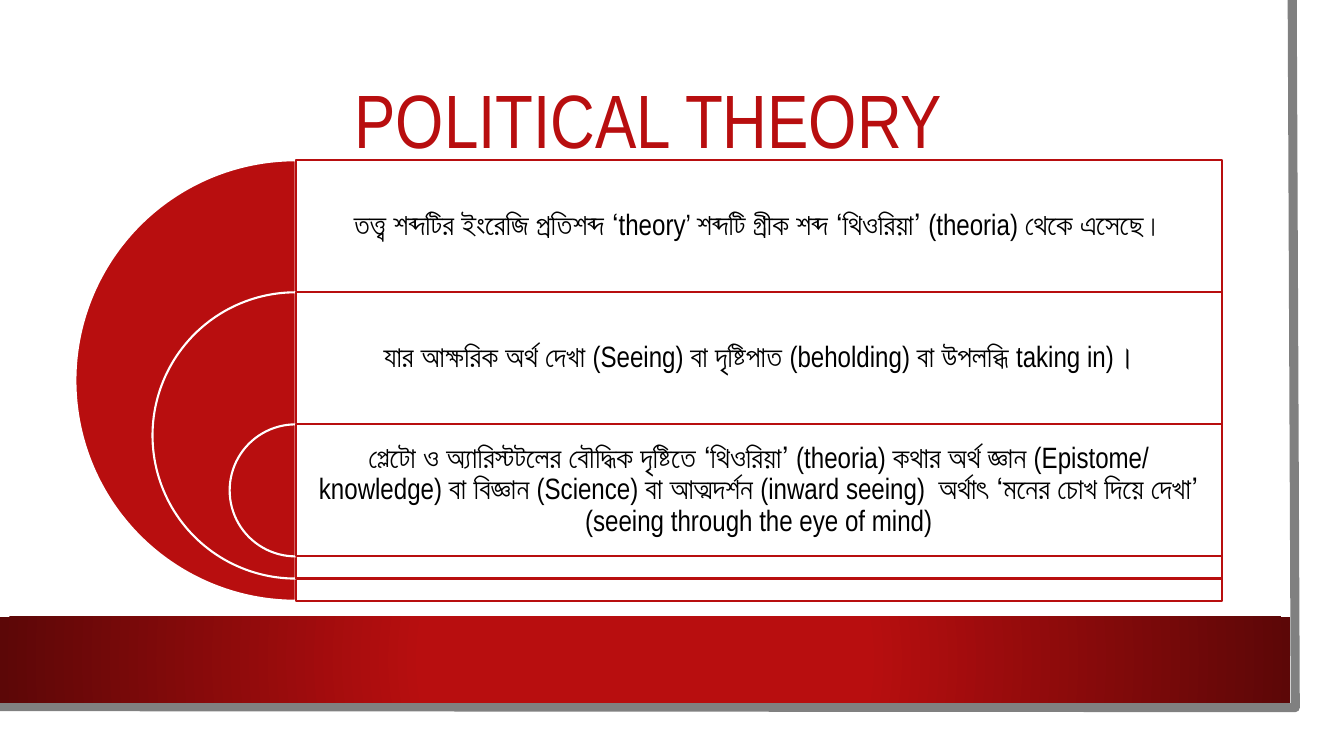
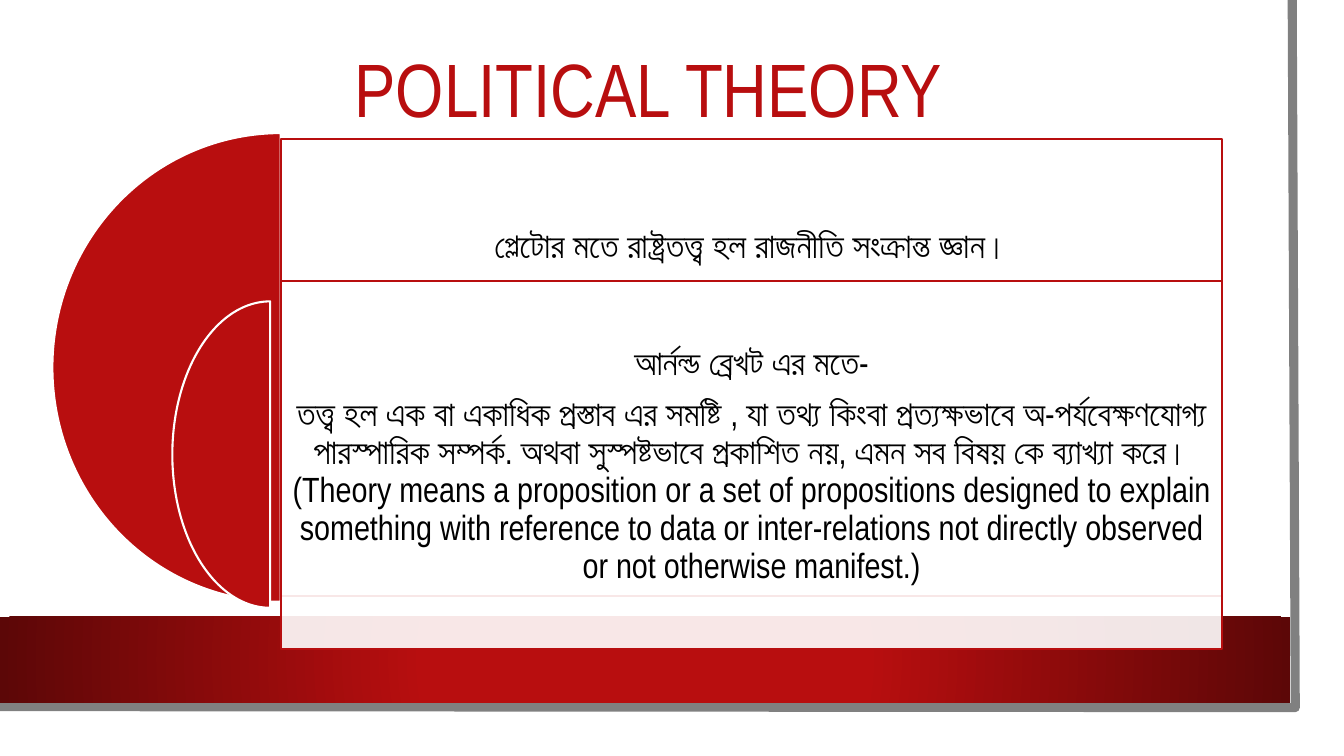
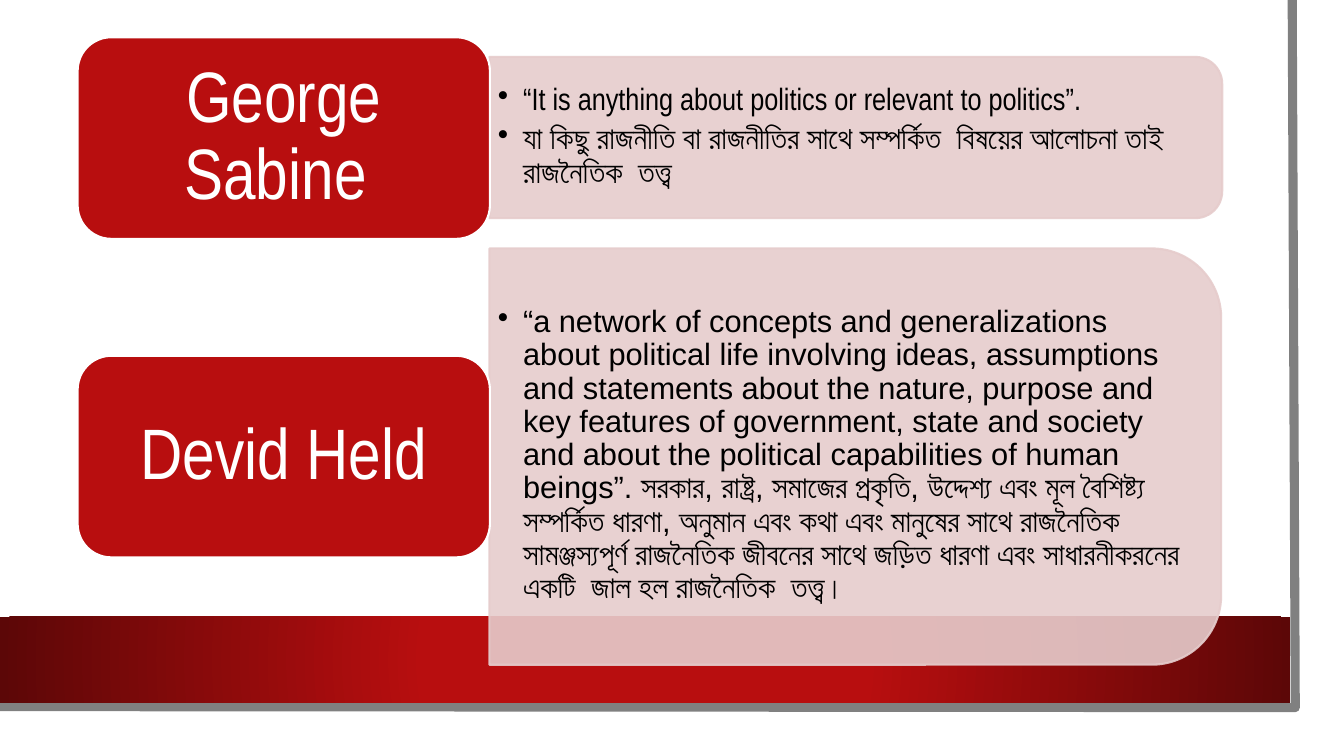
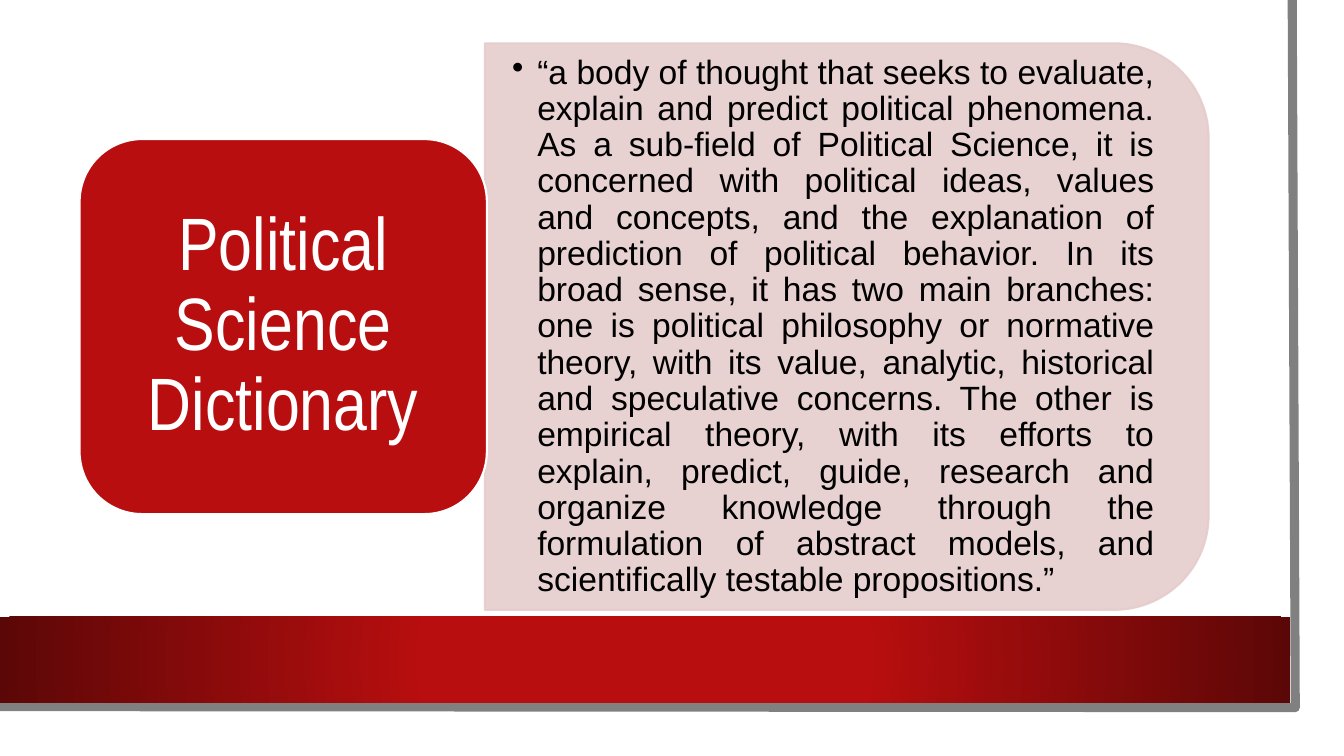
import pptx
import pptx.dml.color
import pptx.enum.shapes
import pptx.enum.text
import pptx.oxml.ns
import pptx.util
from lxml import etree

COLUMNS, ROWS = 160, 90
CELL = pptx.util.Pt(6)
COLORS = {
    "red": "B80E0F",
    "dark red": "5C0707",
    "pink": "E6CCCC",
    "grey": "808080",
    "white": "FFFFFF",
    "black": "000000",
}
SANS, NARROW = "Arial", "Arial Narrow"
SHAPES = pptx.enum.shapes.MSO_SHAPE
ALIGN = pptx.enum.text.PP_ALIGN
qn = pptx.oxml.ns.qn


def cells(*counts):
    return [pptx.util.Emu(round(count * CELL)) for count in counts]


def color(name):
    return pptx.dml.color.RGBColor.from_string(COLORS[name])


def fade(shape, fills):
    for tone in shape.element.xpath(fills + "/a:srgbClr"):
        etree.SubElement(tone, qn("a:alpha"), val="90000")


class Style:
    """Holds the shared style and the current slide, on a grid of 160 by 90 square cells."""

    def __init__(self):
        self.deck = pptx.Presentation()
        self.deck.slide_width, self.deck.slide_height = cells(COLUMNS, ROWS)
        self.layout = self.deck.slide_layouts[6]
        self.page = None

    def add_page(self):
        self.page = self.deck.slides.add_slide(self.layout)

    def backdrop(self):
        for holder in list(self.layout.placeholders):
            holder.element.getparent().remove(holder.element)
        sheet = self.draw(SHAPES.RECTANGLE, (0, 0, 157.2, 87.24), "white")

        corners = [cells(*point) for point in ((153.84, 0), (154.2, 84.24), (-0.36, 84.12))]
        builder = self.page.shapes.build_freeform(*corners[0])
        builder.add_line_segments(corners[1:], close=False)
        edge = builder.convert_to_shape()
        edge.shadow.inherit = False
        edge.fill.background()
        self.outline(edge, "grey", 6.5)

        band = self.draw(SHAPES.RECTANGLE, (0, 73.44, 153.6, 10.2), "red")
        band.fill.gradient()
        for stop, name, position in zip(band.fill.gradient_stops, ("red", "dark red"), (0.34, 1)):
            stop.color.rgb = color(name)
            stop.position = position
        gradient = band.element.spPr.find(qn("a:gradFill"))
        gradient.remove(gradient.find(qn("a:lin")))
        circle = etree.SubElement(gradient, qn("a:path"), {"path": "circle"})
        etree.SubElement(circle, qn("a:fillToRect"), dict.fromkeys("ltrb", "50000"))

        for shape in (sheet, edge, band):
            self.layout.shapes.element.append(shape.element)

    def draw(self, kind, box, fill):
        shape = self.page.shapes.add_shape(kind, *cells(*box))
        shape.shadow.inherit = False
        shape.fill.solid()
        shape.fill.fore_color.rgb = color(fill)
        shape.line.fill.background()
        return shape

    def outline(self, shape, name, width=1.5):
        shape.line.color.rgb = color(name)
        shape.line.width = pptx.util.Pt(width)

    def half_disc(self, box):
        disc = self.draw(SHAPES.PIE, box, "red")
        disc.adjustments[0], disc.adjustments[1] = 54, 162
        self.outline(disc, "white")

    def panel(self, box):
        panel = self.draw(SHAPES.RECTANGLE, box, "white")
        fade(panel, "p:spPr/a:solidFill")
        self.outline(panel, "red")

    def card(self, box):
        left, top, width, height = box
        shift = (width - height) / 2
        upright = (left + shift, top - shift, height, width)
        card = self.draw(SHAPES.ROUND_2_SAME_RECTANGLE, upright, "pink")
        card.rotation = 90
        self.outline(card, "pink")
        fade(card, "p:spPr//a:solidFill")

    def label(self, box, text, size):
        label = self.draw(SHAPES.ROUNDED_RECTANGLE, box, "red")
        self.outline(label, "white")
        self.fill_frame(label.text_frame, [text], size, tone="white", insets=(2.55, 1.32))

    def title(self, box, text):
        self.text_box(box, [text], 54, tone="red", insets=(1.2, 0.6))

    def text_box(self, box, paragraphs, size, **style):
        frame = self.page.shapes.add_textbox(*cells(*box)).text_frame
        return self.fill_frame(frame, paragraphs, size, **style)

    def fill_frame(self, frame, paragraphs, size, font=NARROW, tone="black", align=ALIGN.CENTER,
                   insets=(1.08, 1.08), gap=0, bullet=False):
        frame.text = "\n".join(paragraphs)
        frame.word_wrap = True
        frame.vertical_anchor = pptx.enum.text.MSO_ANCHOR.MIDDLE
        frame.margin_left, frame.margin_top = cells(*insets)
        frame.margin_right, frame.margin_bottom = cells(*insets)
        for para in frame.paragraphs:
            if bullet:
                hang = cells(3)[0]
                properties = para._p.get_or_add_pPr()
                properties.set("marL", str(hang))
                properties.set("indent", str(-hang))
                etree.SubElement(properties, qn("a:buChar"), char="•")
            para.alignment = align
            para.line_spacing = 0.9
            para.space_after = pptx.util.Pt(gap)
            for span in para.runs:
                self.style_span(span, size, font, tone)
        return frame

    def style_span(self, span, size, font, tone="black"):
        span.font.size = pptx.util.Pt(size)
        span.font.name = font
        span.font.color.rgb = color(tone)


def origin_of_theory(style):
    style.title((9, 9, 136.44, 11.64), "POLITICAL THEORY")
    meanings = [
        "তত্ত্ব শব্দটির ইংরেজি প্রতিশব্দ ‘theory’ শব্দটি গ্রীক শব্দ ‘থিওরিয়া’ (theoria) থেকে এসেছে।",
        "যার আক্ষরিক অর্থ দেখা (Seeing) বা দৃষ্টিপাত (beholding) বা উপলব্ধি taking in)।",
        "প্লেটো ও অ্যারিস্টটলের বৌদ্ধিক দৃষ্টিতে ‘থিওরিয়া’ (theoria) কথার অর্থ জ্ঞান (Epistome/ "
        "knowledge) বা বিজ্ঞান (Science) বা আত্মদর্শন (inward seeing)  অর্থাৎ ‘মনের চোখ দিয়ে দেখা’ "
        "(seeing through the eye of mind)",
    ]
    center, width, step = 35.2, 110.24, 15.72
    for index, meaning in enumerate(meanings):
        top = 19.08 + index * step
        size = 52.44 - index * 18.36
        style.half_disc((center - size / 2, top, size, size))
        style.panel((center, top, width, size))
        style.text_box((center, top, width, step), [meaning], 21)


def definitions_of_theory(style):
    style.title((9, 3.48, 136.44, 15.12), "POLITICAL THEORY")
    left, width = 33.48, 111.96
    plato = ["প্লেটোর মতে রাষ্ট্রতত্ত্ব হল রাজনীতি সংক্রান্ত জ্ঞান।"]
    brecht = [
        "আর্নল্ড ব্রেখট এর মতে-",
        "তত্ত্ব হল এক বা একাধিক প্রস্তাব এর সমষ্টি , যা তথ্য কিংবা প্রত্যক্ষভাবে অ-পর্যবেক্ষণযোগ্য "
        "পারস্পারিক সম্পর্ক. অথবা সুস্পষ্টভাবে প্রকাশিত নয়, এমন সব বিষয় কে ব্যাখ্যা করে। "
        "(Theory means a proposition or a set of propositions designed to explain something with "
        "reference to data or inter-relations not directly observed or not otherwise manifest.)",
    ]
    for disc, top, height, text_height, paragraphs in (
        ((6.24, 15.84, 54.36, 55.8), 16.56, 54.36, 25.8, plato),
        ((20.52, 35.88, 23.28, 36.48), 33.48, 43.8, 43.8, brecht),
    ):
        style.half_disc(disc)
        style.panel((left, top, width, height))
        style.text_box((left, top, width, text_height), paragraphs, 25, insets=(1.2, 1.2), gap=10)


def sabine_and_held(style):
    quote = {"align": ALIGN.LEFT, "insets": (1.08, 0.6), "gap": 4, "bullet": True}
    style.card((58.26, 6.78, 87.24, 19.2))
    style.text_box((58.2, 7.68, 86.28, 17.28), [
        "“It is anything about politics or relevant to politics”.",
        "যা কিছু রাজনীতি বা রাজনীতির সাথে সম্পর্কিত  বিষয়ের আলোচনা তাই রাজনৈতিক  তত্ত্ব",
    ], 22, **quote)
    style.label((9.24, 4.44, 49.08, 24), "George Sabine ", 51)

    style.card((58.26, 29.58, 87.12, 49.56))
    held = style.text_box((58.2, 31.92, 84.72, 44.64), [
        "“a network of concepts and generalizations about political life involving ideas, "
        "assumptions and statements about the nature, purpose and key features of government, "
        "state and society and about the political capabilities of human beings”. "
        "সরকার, রাষ্ট্র, সমাজের প্রকৃতি, উদ্দেশ্য এবং মূল বৈশিষ্ট্য  সম্পর্কিত ধারণা, অনুমান এবং কথা এবং "
        "মানুষের সাথে রাজনৈতিক সামঞ্জস্যপূর্ণ রাজনৈতিক জীবনের সাথে জড়িত ধারণা এবং সাধারনীকরনের "
        "একটি  জাল হল ",
    ], 22, font=SANS, **quote)
    ending = held.paragraphs[0].add_run()
    ending.text = "রাজনৈতিক  তত্ত্ব।"
    style.style_span(ending, 22, NARROW)
    style.label((9.24, 42.36, 49.08, 24), "Devid Held", 51)


def dictionary_entry(style):
    style.card((57.72, 5.16, 86.16, 67.44))
    style.text_box((57.72, 8.52, 82.92, 60.84), [
        "“a body of thought that seeks to evaluate, explain and predict political phenomena. As a "
        "sub-field of Political Science, it is concerned with political ideas, values and concepts, "
        "and the explanation of prediction of political behavior. In its broad sense, it has two main "
        "branches: one is political philosophy or normative theory, with its value, analytic, "
        "historical and speculative concerns. The other is empirical theory, with its efforts to "
        "explain, predict, guide, research and organize knowledge through the formulation of abstract "
        "models, and scientifically testable propositions.”",
    ], 24, font=SANS, align=ALIGN.JUSTIFY, insets=(3.24, 1.68), bullet=True)
    style.label((9.48, 16.56, 48.48, 44.64), "Political Science Dictionary", 53)


def main():
    style = Style()
    for fill_page in (origin_of_theory, definitions_of_theory, sabine_and_held, dictionary_entry):
        style.add_page()
        if len(style.deck.slides) == 1:
            style.backdrop()
        fill_page(style)
    style.deck.save("out.pptx")


if __name__ == "__main__":
    main()
